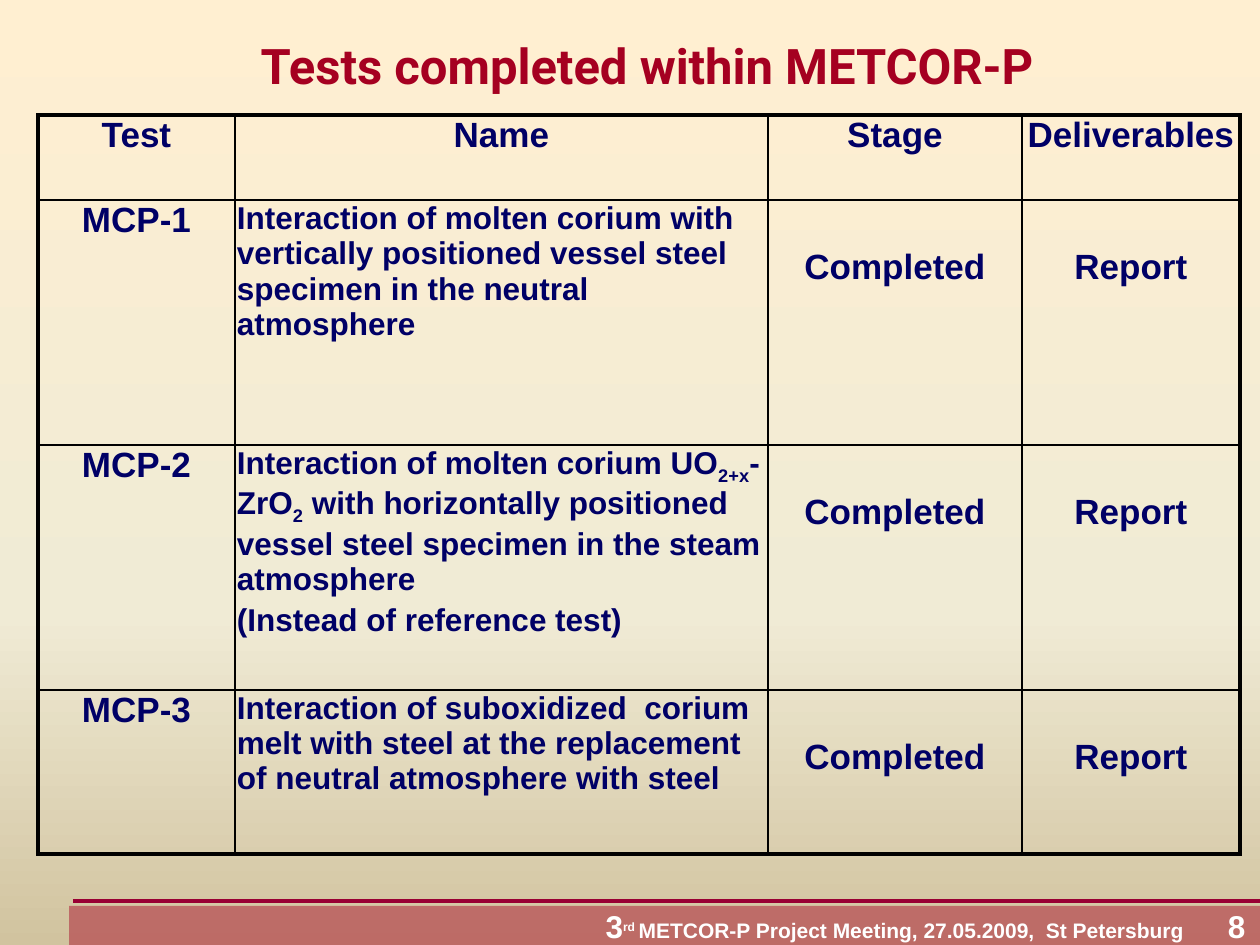
from pptx import Presentation
from pptx import util as u
from pptx.dml.color import RGBColor
from pptx.enum import shapes, text
from pptx.oxml import ns, xmlchemy
from lxml import etree

PX = 914400 // 126
NAVY, CRIMSON, WHITE = "000066", "A50021", "FFFFFF"
CENTER, LEFT = text.PP_ALIGN.CENTER, text.PP_ALIGN.LEFT


def rgb(value):
    return RGBColor.from_string(value)


def add_run(p, words, size, color, font="Arial", base=0):
    r = p.add_run()
    r.text = words
    formats = {"size": u.Pt(size), "name": font, "bold": True}
    for key, value in formats.items():
        setattr(r.font, key, value)
    r.font.color.rgb = rgb(color)
    if base:
        r.font._element.set("baseline", str(base * 1000))


prs = Presentation()
prs.slide_width, prs.slide_height = 1260 * PX, 945 * PX
s = prs.slides.add_slide(prs.slide_layouts[5])

# Background gradient, top to bottom
s.background.fill.gradient()
grad = s._element.find(".//" + ns.qn("a:gradFill"))
stops = grad.find(ns.qn("a:gsLst"))
for old in list(stops):
    stops.remove(old)
for pos, color in ((0, "FFEFD1"), (65, "F0EBD5"), (100, "D1C39F")):
    gs = etree.SubElement(stops, ns.qn("a:gs"), pos=str(pos * 1000))
    etree.SubElement(gs, ns.qn("a:srgbClr"), val=color)
grad.find(ns.qn("a:lin")).set("ang", "5400000")

# Footer rule
line = s.shapes.add_connector(shapes.MSO_CONNECTOR.STRAIGHT,
                              73 * PX, 901 * PX, 1260 * PX, 901 * PX)
line.line.color.rgb = rgb("990033")
line.line.width = u.Pt(2.25)
etree.SubElement(line._element.spPr, ns.qn("a:effectLst"))

# Footer band, half transparent
sp = s.shapes.add_shape(shapes.MSO_SHAPE.RECTANGLE,
                        69 * PX, 906 * PX, 1191 * PX, 39 * PX)
sp.shadow.inherit = False
sp.line.fill.background()
sp.fill.solid()
sp.fill.fore_color.rgb = rgb(CRIMSON)
fill_color = sp._element.spPr.find(".//" + ns.qn("a:srgbClr"))
etree.SubElement(fill_color, ns.qn("a:alpha"), val="45000")

# Footer text: meeting and page number end at right tab stops
tf = sp.text_frame
tf.word_wrap = True
tf.vertical_anchor = text.MSO_ANCHOR.MIDDLE
p = tf.paragraphs[0]
p.alignment = LEFT
tabs = etree.SubElement(p._p.get_or_add_pPr(), ns.qn("a:tabLst"))
for stop in (1103, 1164):
    etree.SubElement(tabs, ns.qn("a:tab"), pos=str(stop * PX), algn="r")
for words, size, base in (
        ("\t3", 18, 0), ("rd ", 12, 30),
        ("METCOR-P Project Meeting, 27.05.2009,  St Petersburg", 12, 0),
        ("\t8", 18, 0)):
    add_run(p, words, size, WHITE, base=base)

# Title
title = s.shapes.title
frame = {"left": 94, "top": 24, "width": 1106, "height": 81}
for key, value in frame.items():
    setattr(title, key, value * PX)
tf = title.text_frame
tf.vertical_anchor = text.MSO_ANCHOR.MIDDLE
p = tf.paragraphs[0]
p.alignment = CENTER
add_run(p, "Tests completed within METCOR-P", 28, CRIMSON, "Roboto")

# Table content: each name is a list of paragraphs, each a list of (text, baseline)
header = ["Test", "Name", "Stage", "Deliverables"]
names = [
    [[("Interaction of molten corium with vertically positioned vessel steel "
       "specimen in the neutral atmosphere", 0)]],
    [[("Interaction of molten corium UO", 0), ("2+x", -25), ("-ZrO", 0), ("2", -25),
      (" with horizontally positioned vessel steel specimen in the steam "
       "atmosphere", 0)],
     [("(Instead of reference test)", 0)]],
    [[("Interaction of suboxidized  corium melt with steel at the replacement "
       "of neutral atmosphere with steel", 0)]],
]
rows = [[[[(words, 0)]] for words in header]]
for number, name in enumerate(names, 1):
    rows.append([[[(f"МСР-{number}", 0)]], name,
                 [[("Completed", 0)]], [[("Report", 0)]]])

# Table grid
widths, heights = (197, 533, 254, 218), (85, 245, 245, 164)
table = s.shapes.add_table(len(heights), len(widths), 38 * PX, 115 * PX,
                           sum(widths) * PX, sum(heights) * PX).table
table.first_row = table.horz_banding = False
for col, width in zip(table.columns, widths):
    col.width = width * PX
for row, height in zip(table.rows, heights):
    row.height = height * PX

# Cells: thick outer frame, thin inner lines
for i, row in enumerate(rows):
    for j, paragraphs in enumerate(row):
        cell = table.cell(i, j)
        is_name = i > 0 and j == 1
        is_status = i > 0 and j > 1
        margins = {"left": 2, "right": 2, "top": 48 if is_status else 1, "bottom": 1}
        for side, value in margins.items():
            setattr(cell, f"margin_{side}", value * PX)
        outer = {"L": j == 0, "R": j == len(widths) - 1,
                 "T": i == 0, "B": i == len(heights) - 1}
        tcPr = cell._tc.get_or_add_tcPr()
        for side, thick in outer.items():
            ln = etree.SubElement(tcPr, ns.qn(f"a:ln{side}"),
                                  w=str(u.Pt(2.25 if thick else 1)))
            fill = etree.SubElement(ln, ns.qn("a:solidFill"))
            etree.SubElement(fill, ns.qn("a:srgbClr"), val="000000")
        cell.fill.background()
        tf = cell.text_frame
        for k, runs in enumerate(paragraphs):
            p = tf.add_paragraph() if k else tf.paragraphs[0]
            p.alignment = LEFT if is_name else CENTER
            if k:
                p.space_before = u.Pt(3.6)
            for words, base in runs:
                add_run(p, words, 18 if is_name else 20, NAVY, base=base)

prs.save("out.pptx")
